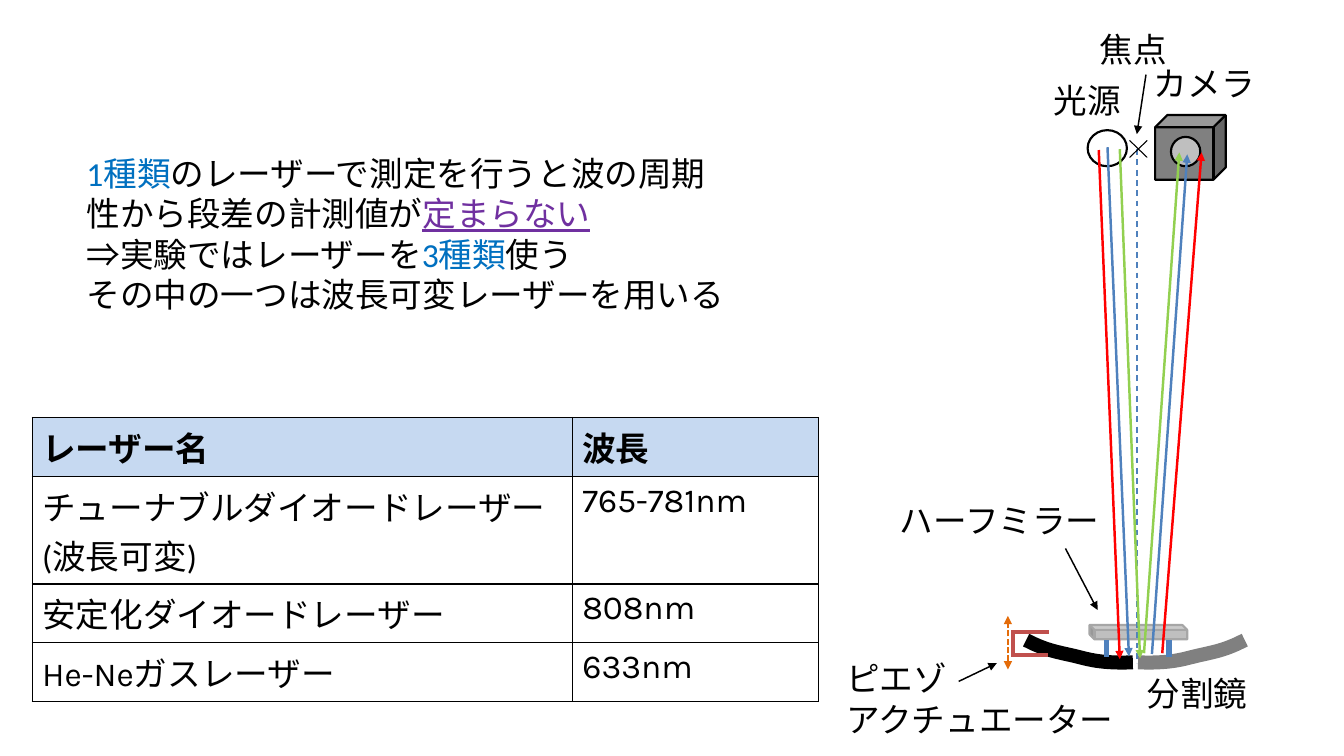
from dataclasses import dataclass

from lxml import etree
from pptx import Presentation
from pptx import util as u
from pptx.dml.color import RGBColor
from pptx.enum import dml, shapes, text
from pptx.oxml import ns


@dataclass(frozen=True)
class Theme:
    black: str = "000000"
    white: str = "FFFFFF"
    header: str = "C6D9F1"
    gray: str = "808080"
    silver: str = "BFBFBF"
    edge: str = "A6A6A6"
    blue: str = "4F81BD"
    red: str = "FF0000"
    green: str = "92D050"
    bracket: str = "C0504D"
    orange: str = "E46C0A"
    accent: str = "0070C0"
    purple: str = "7030A0"
    font: str = "Calibri"
    number_font: str = "Karla"
    size: int = 24
    thin: float = 1.04
    outline: float = 1.54
    beam: float = 1.75


def set_attrs(obj, values):
    for name, value in values.items():
        setattr(obj, name, value)


def add_xml(parent, tag, **attrs):
    return etree.SubElement(parent, ns.qn(tag), attrs)


class SlideMaker:
    def __init__(self, slide, theme):
        self.s = slide
        self.t = theme

    def paint_line(self, line, color, width, dash=None):
        line.color.rgb = RGBColor.from_string(color)
        set_attrs(line, {"width": u.Pt(width), "dash_style": dash})

    def paint_fill(self, fill, color):
        fill.solid()
        fill.fore_color.rgb = RGBColor.from_string(color)

    def run(self, p, words, color=None, font=None, **fmt):
        r = p.add_run()
        r.text = words
        set_attrs(r.font, {"size": u.Pt(self.t.size), "name": font or self.t.font, **fmt})
        r.font.color.rgb = RGBColor.from_string(color or self.t.black)
        return r

    def textbox(self, x, y, w, h, paragraphs):
        tf = self.s.shapes.add_textbox(*map(u.Cm, (x, y, w, h))).text_frame
        set_attrs(tf, {"word_wrap": True, "auto_size": text.MSO_AUTO_SIZE.SHAPE_TO_FIT_TEXT})
        for i, runs in enumerate(paragraphs):
            p = tf.add_paragraph() if i else tf.paragraphs[0]
            for words, color, underline in runs:
                r = self.run(p, words, color, underline=underline)
                add_xml(r.font._element, "a:ea", typeface=self.t.font)

    def label(self, x, y, w, h, *lines):
        self.textbox(x, y, w, h, [[(line, self.t.black, None)] for line in lines])

    def shape(self, kind, box, fill, line, width, adj=None, flip=False):
        sp = self.s.shapes.add_shape(kind, *map(u.Cm, box))
        sp.shadow.inherit = False
        self.paint_fill(sp.fill, fill)
        self.paint_line(sp.line, line, width)
        if adj is not None:
            sp.adjustments[0] = adj
        if flip:
            sp.element.spPr.xfrm.set("flipH", "1")

    def line(self, start, end, color, width, dash=None, ends=()):
        c = self.s.shapes.add_connector(shapes.MSO_CONNECTOR.STRAIGHT, *map(u.Cm, start + end))
        self.paint_line(c.line, color, width, dash)
        for tag in ends:
            add_xml(c.line._get_or_add_ln(), tag, type="triangle")
        add_xml(c.element.spPr, "a:effectLst")

    def arrow(self, start, end, color, width):
        self.line(start, end, color, width, ends=("a:tailEnd",))

    def curve(self, x, y, side, beziers, color, width, steps=12):
        points = []
        for curve in beziers:
            for i in range(1, steps + 1):
                k = i / steps
                weights = ((1 - k) ** 3, 3 * k * (1 - k) ** 2, 3 * k * k * (1 - k), k ** 3)
                dx, dy = (sum(a * b for a, b in zip(weights, axis)) for axis in zip(*curve))
                points.append((u.Cm(x + side * dx), u.Cm(y + dy)))
        fb = self.s.shapes.build_freeform(u.Cm(x), u.Cm(y))
        fb.add_line_segments(points, close=False)
        sp = fb.convert_to_shape()
        sp.shadow.inherit = False
        sp.fill.background()
        self.paint_line(sp.line, color, width)

    def border(self, cell):
        pr = cell._tc.get_or_add_tcPr()
        for i, side in enumerate("LRTB"):
            ln = etree.Element(ns.qn(f"a:ln{side}"), w=str(u.Pt(1)))
            add_xml(add_xml(ln, "a:solidFill"), "a:srgbClr", val=self.t.black)
            pr.insert(i, ln)

    def table(self, x, y, widths, row_height, rows):
        size = sum(widths), row_height * len(rows)
        tb = self.s.shapes.add_table(len(rows), len(widths), *map(u.Cm, (x, y) + size)).table
        for column, width in zip(tb.columns, widths):
            column.width = u.Cm(width)
        for i, row in enumerate(rows):
            tb.rows[i].height = u.Cm(row_height)
            for j, (words, font) in enumerate(row):
                cell = tb.cell(i, j)
                self.paint_fill(cell.fill, self.t.white if i else self.t.header)
                self.border(cell)
                self.run(cell.text_frame.paragraphs[0], words, font=font, bold=i == 0)


def main():
    prs = Presentation()
    set_attrs(prs, {"slide_width": u.Cm(33.87), "slide_height": u.Cm(19.05)})
    t = Theme()
    m = SlideMaker(prs.slides.add_slide(prs.slide_layouts[6]), t)
    kinds = shapes.MSO_SHAPE
    dashes = dml.MSO_LINE

    m.table(0.81, 10.52, (13.61, 6.2), 1.04, [
        [("レーザー名", t.font), ("波長", t.font)],
        [("チューナブルダイオードレーザー(波長可変)", t.font), ("765-781nm", t.number_font)],
        [("安定化ダイオードレーザー", t.font), ("808nm", t.number_font)],
        [("He-Neガスレーザー", t.number_font), ("633nm", t.number_font)],
    ])

    mirror = (
        ((0, 0), (0.86, 0.03), (1.12, -0.08), (1.55, -0.18)),
        ((1.55, -0.18), (2.01, -0.28), (2.24, -0.33), (2.69, -0.56)),
    )
    for x, side, color in ((28.68, 1, t.gray), (28.55, -1, t.black)):
        m.curve(x, 16.69, side, mirror, color, 10)

    m.shape(kinds.CUBE, (27.46, 15.75, 2.46, 0.36), t.silver, t.edge, t.outline, 0.344, True)
    for x in (27.89, 29.46):
        m.line((x, 16.13), (x, 16.56), t.blue, 3.75)
    m.line((28.65, 3.76), (28.65, 16.71), t.blue, t.thin, dashes.DASH)

    m.shape(kinds.OVAL, (27.41, 3.28, 0.99, 0.91), t.white, t.black, t.outline)
    m.shape(kinds.CUBE, (29.11, 2.9, 1.78, 1.63), t.gray, t.black, t.outline, 0.189)
    m.shape(kinds.OVAL, (29.51, 3.45, 0.74, 0.74), t.silver, t.black, t.outline)

    for start, end, color in (
        ((27.91, 3.71), (28.45, 16.54), t.blue),
        ((27.69, 3.78), (28.22, 16.61), t.red),
        ((29.29, 16.46), (30.28, 3.84), t.red),
        ((28.22, 3.76), (28.73, 16.59), t.green),
        ((28.83, 16.46), (29.72, 3.84), t.green),
        ((29.03, 16.48), (29.92, 3.89), t.blue),
    ):
        m.arrow(start, end, color, t.beam)

    m.shape(kinds.MATH_MULTIPLY, (28.27, 3.35, 0.84, 0.81), t.black, t.black, 0, 0)

    for start, end in (
        ((28.88, 1.88), (28.65, 3.38)),
        ((26.85, 13.82), (27.66, 15.37)),
        ((24.16, 17.17), (25.12, 16.71)),
    ):
        m.arrow(start, end, t.black, t.thin)

    for start, end in (
        ((25.48, 15.93), (26.44, 15.93)),
        ((25.48, 16.51), (26.42, 16.51)),
        ((25.53, 16.51), (25.53, 15.9)),
    ):
        m.line(start, end, t.bracket, 3)
    m.line((25.4, 16.87), (25.4, 15.52), t.orange, 1.5, dashes.SQUARE_DOT,
           ("a:headEnd", "a:tailEnd"))

    m.label(28.83, 1.45, 3.38, 1.27, "カメラ")
    m.label(26.31, 1.88, 2.79, 1.27, "光源")
    m.label(27.46, 0.61, 2.79, 1.27, "焦点")
    m.label(28.65, 16.84, 3.56, 1.27, "分割鏡")
    m.label(22.43, 12.47, 5.87, 1.27, "ハーフミラー")
    m.label(21.08, 16.46, 7.39, 2.31, "ピエゾ", "アクチュエーター")

    m.textbox(1.93, 3.73, 16.94, 4.37, [
        [("1種類", t.accent, None),
         ("のレーザーで測定を行うと波の周期性から段差の計測値が", t.black, None),
         ("定まらない", t.purple, True)],
        [("⇒実験ではレーザーを", t.black, None),
         ("3種類", t.accent, None),
         ("使う", t.black, None)],
        [("その中の一つは波長可変レーザーを用いる", t.black, None)],
    ])
    prs.save("out.pptx")


if __name__ == "__main__":
    main()
